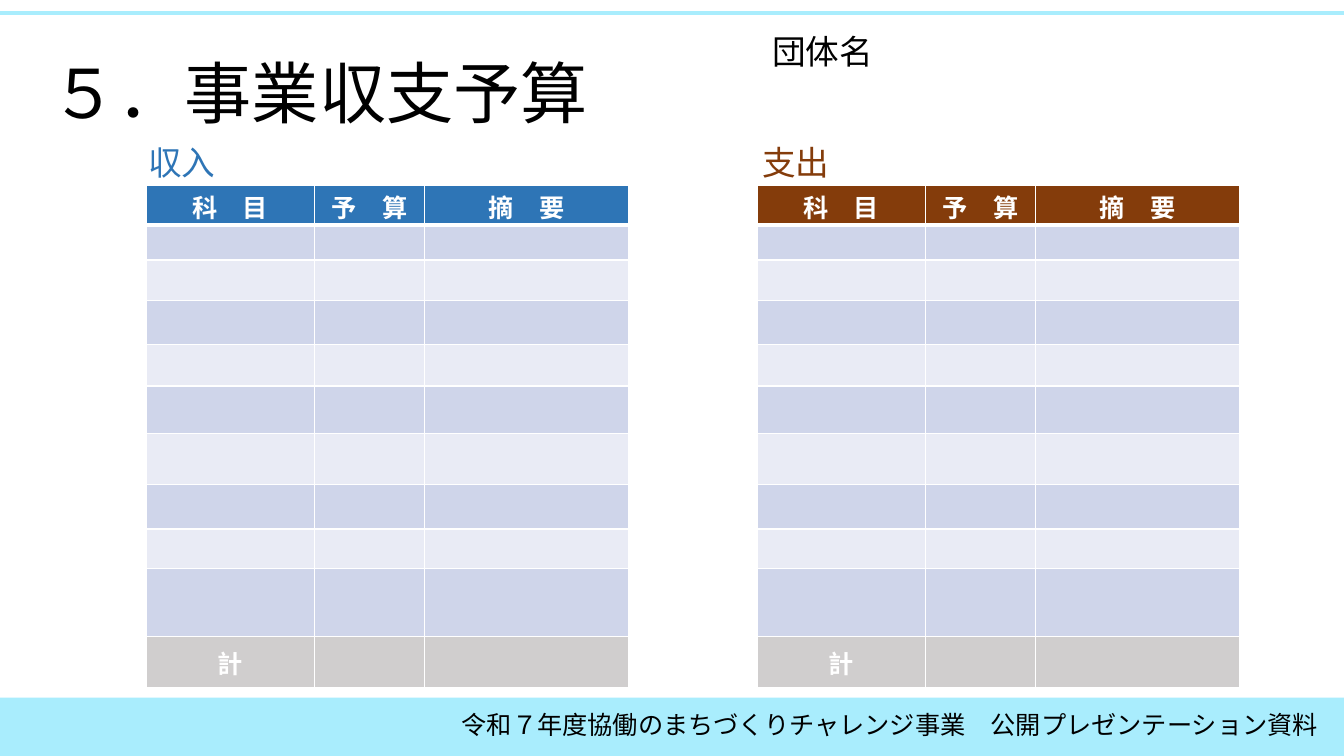
from lxml.etree import SubElement
from pptx import Presentation
from pptx.dml.color import RGBColor
from pptx.enum.shapes import MSO_CONNECTOR as Connector, MSO_SHAPE as Shape
from pptx.enum.text import MSO_ANCHOR as Anchor, PP_ALIGN as Align
from pptx.oxml.ns import qn
from pptx.util import Inches, Pt

COLORS = {
    "black": "000000",
    "white": "FFFFFF",
    "band": "A9EDFD",
    "income": "2E75B6",
    "expense": "843C0B",
    "odd_row": "CFD5EA",
    "even_row": "E9EBF5",
    "total": "D0CECE",
}
JAPANESE_FONT = "Noto Sans CJK JP"
TABLE_FONT = "Calibri"
WIDTH, HEIGHT = 13.33, 7.5
COLUMN_WIDTHS = [1.67, 1.09, 2.03]
ROW_HEIGHTS = [0.39, 0.35, 0.4, 0.44, 0.41, 0.47, 0.51, 0.44, 0.39, 0.68, 0.5]
HEADINGS = ["科　目", "予　算", "摘　要"]


def color(name):
    return RGBColor.from_string(COLORS[name])


def add_run(paragraph, text, size, color_name, font=JAPANESE_FONT, bold=None):
    run = paragraph.add_run()
    run.text = text
    run.font.size = Pt(size)
    run.font.bold = bold
    run.font.name = font
    run.font.color.rgb = color(color_name)
    east_asian = SubElement(run.font._element, qn("a:ea"))
    east_asian.set("typeface", JAPANESE_FONT)


def add_label(slide, box, text, size, color_name="black"):
    shape = slide.shapes.add_textbox(*map(Inches, box))
    shape.text_frame.word_wrap = True
    add_run(shape.text_frame.paragraphs[0], text, size, color_name)


def set_borders(cell, top, bottom):
    properties = cell._tc.get_or_add_tcPr()
    for side, points in (("L", 1), ("R", 1), ("T", top), ("B", bottom)):
        line = SubElement(properties, qn(f"a:ln{side}"), w=str(Pt(points)))
        fill = SubElement(line, qn("a:solidFill"))
        SubElement(fill, qn("a:srgbClr"), val=COLORS["white"])


def row_fill(row, last, accent):
    if row == 0:
        return accent
    if row == last:
        return "total"
    return "odd_row" if row % 2 else "even_row"


def add_budget_table(slide, left, top, accent):
    last = len(ROW_HEIGHTS) - 1
    frame = slide.shapes.add_table(
        len(ROW_HEIGHTS), len(COLUMN_WIDTHS), Inches(left), Inches(top),
        Inches(sum(COLUMN_WIDTHS)), Inches(sum(ROW_HEIGHTS)))
    table = frame.table
    for column, width in zip(table.columns, COLUMN_WIDTHS):
        column.width = Inches(width)
    texts = {(0, column): heading for column, heading in enumerate(HEADINGS)}
    texts[last, 0] = "計"
    for row, height in enumerate(ROW_HEIGHTS):
        table.rows[row].height = Inches(height)
        for column in range(len(COLUMN_WIDTHS)):
            cell = table.cell(row, column)
            set_borders(cell, 3 if row == 1 else 1, 3 if row == 0 else 1)
            cell.fill.solid()
            cell.fill.fore_color.rgb = color(row_fill(row, last, accent))
            paragraph = cell.text_frame.paragraphs[0]
            if (row, column) in texts:
                paragraph.alignment = Align.CENTER
                add_run(paragraph, texts[row, column], 18, "white", TABLE_FONT, True)
            else:
                paragraph._p.get_or_add_endParaRPr().set("sz", "1200")
            if row == 0:
                cell.margin_top, cell.margin_bottom = Inches(0.03), 0
            if row == last:
                cell.vertical_anchor = Anchor.MIDDLE


def add_header(slide):
    rule = slide.shapes.add_connector(
        Connector.STRAIGHT, 0, Inches(0.13), Inches(WIDTH), Inches(0.13))
    rule.line.color.rgb = color("band")
    rule.line.width = Pt(3)
    SubElement(rule._element.spPr, qn("a:effectLst"))
    add_label(slide, (0.4, 0.46, 8.83, 0.91), "５．事業収支予算", 48)
    add_label(slide, (7.56, 0.26, 4.83, 0.5), "団体名", 24)


def add_footer(slide, top):
    band = slide.shapes.add_shape(
        Shape.RECTANGLE, 0, Inches(top), Inches(WIDTH), Inches(HEIGHT - top))
    band.shadow.inherit = False
    band.fill.solid()
    band.fill.fore_color.rgb = color("band")
    band.line.fill.background()
    add_label(slide, (4.48, top + 0.07, 8.92, 0.4),
              "令和７年度協働のまちづくりチャレンジ事業　公開プレゼンテーション資料", 18)


def add_budget(slide, left, top, title, title_offset, accent):
    add_label(slide, (left + title_offset, top, 1.85, 0.5), title, 24, accent)
    add_budget_table(slide, left, top + 0.48, accent)


def main():
    presentation = Presentation()
    presentation.slide_width = Inches(WIDTH)
    presentation.slide_height = Inches(HEIGHT)
    slide = presentation.slides.add_slide(presentation.slide_layouts[6])
    add_header(slide)
    add_footer(slide, 6.92)
    add_budget(slide, 1.45, 1.36, "収入", -0.08, "income")
    add_budget(slide, 7.51, 1.36, "支出", -0.05, "expense")
    presentation.save("out.pptx")


if __name__ == "__main__":
    main()
